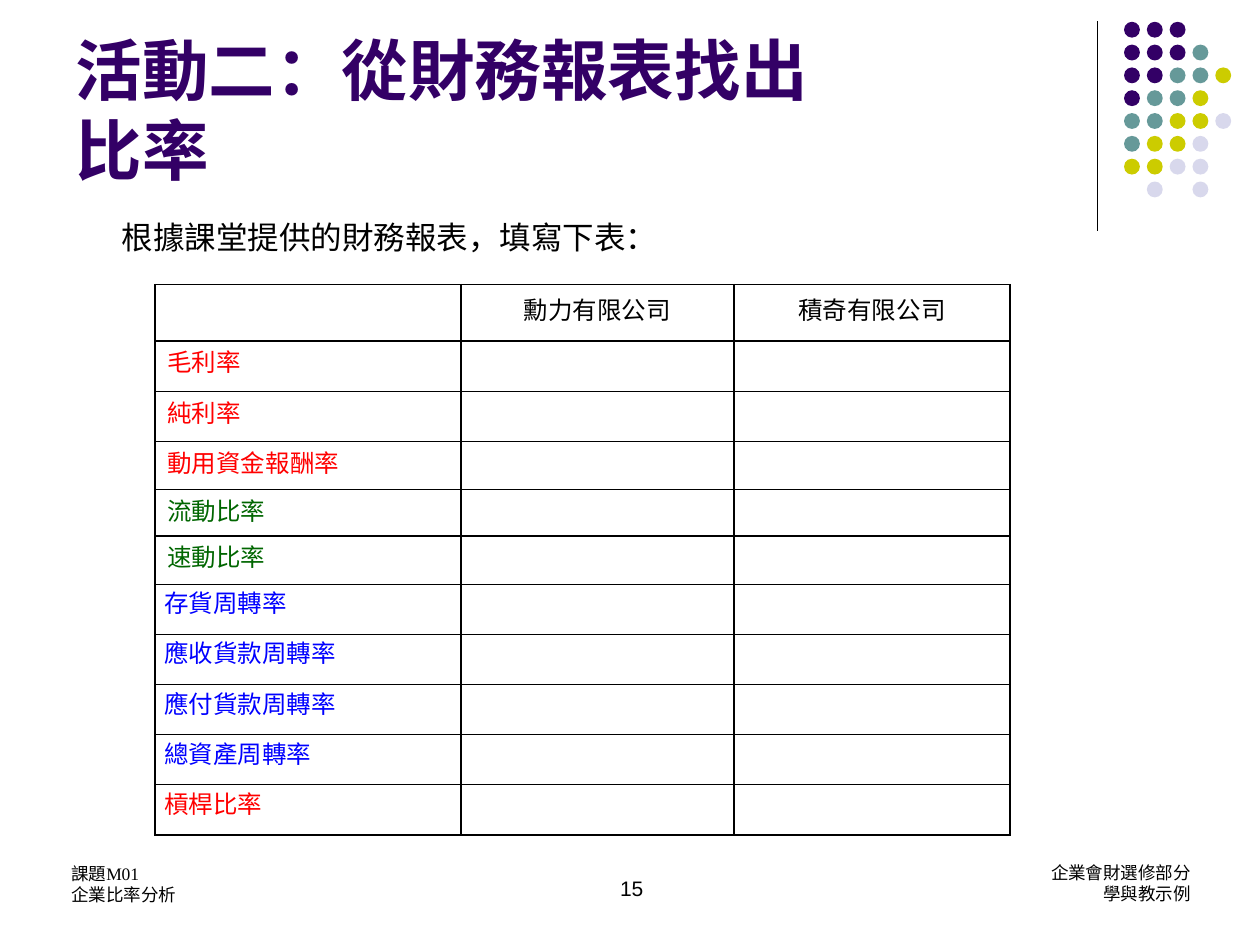
"""Build the slide on finding ratios from financial statements."""
from lxml import etree
from pptx import Presentation
from pptx.dml.color import RGBColor
from pptx.enum.shapes import MSO_CONNECTOR, MSO_SHAPE
from pptx.enum.text import MSO_ANCHOR, MSO_AUTO_SIZE, PP_ALIGN
from pptx.oxml import parse_xml
from pptx.oxml.ns import qn
from pptx.util import Cm, Pt

LINE = MSO_CONNECTOR.STRAIGHT
OVAL = MSO_SHAPE.OVAL
TOP, BOTTOM = MSO_ANCHOR.TOP, MSO_ANCHOR.BOTTOM
FIXED = MSO_AUTO_SIZE.NONE
LEFT, CENTER, RIGHT = PP_ALIGN.LEFT, PP_ALIGN.CENTER, PP_ALIGN.RIGHT

BLACK = RGBColor(0x00, 0x00, 0x00)
PURPLE = RGBColor(0x33, 0x00, 0x66)
TEAL = RGBColor(0x66, 0x99, 0x99)
LIME = RGBColor(0xCC, 0xCC, 0x00)
PALE = RGBColor(0xD8, 0xD8, 0xEC)
RED = RGBColor(0xFF, 0x00, 0x00)
GREEN = RGBColor(0x00, 0x66, 0x00)
BLUE = RGBColor(0x00, 0x00, 0xFF)

ARIAL, COMIC, TIMES = "Arial", "Comic Neue", "Times New Roman"
BORDER = (
    '<a:{} xmlns:a="http://schemas.openxmlformats.org/drawingml/2006/main" w="12700">'
    '<a:solidFill><a:srgbClr val="000000"/></a:solidFill></a:{}>'
)


def write(par, size, color, *parts, bold=False):
    for text, face in parts:
        run = par.add_run()
        run.text = text
        run.font.name = face
        run.font.size = Pt(size)
        run.font.bold = bold
        run.font.color.rgb = color


def label(box, lines, size, face, align, wrap=True, anchor=TOP):
    shape = slide.shapes.add_textbox(*map(Cm, box))
    frame = shape.text_frame
    frame.word_wrap = wrap
    frame.vertical_anchor = anchor
    frame.text = "\n".join(lines)
    for par in frame.paragraphs:
        par.alignment = align
        for run in par.runs:
            run.font.name = face
            run.font.size = Pt(size)
            run.font.color.rgb = BLACK


prs = Presentation()
prs.slide_width, prs.slide_height = Cm(25.4), Cm(19.05)
slide = prs.slides.add_slide(prs.slide_layouts[5])

rule = slide.shapes.add_connector(LINE, Cm(22.12), Cm(0.43), Cm(22.12), Cm(4.65))
rule.line.color.rgb = BLACK
rule.line.width = Pt(0.75)
etree.SubElement(rule.element.spPr, qn("a:effectLst"))

tints = {"P": PURPLE, "T": TEAL, "L": LIME, "S": PALE}
dots = ["PPP", "PPPT", "PPTTL", "PTTL", "TTLLS", "TLLS", "LLSS", " S S"]
for row, marks in enumerate(dots):
    for col, mark in enumerate(marks):
        if mark in tints:
            dot = slide.shapes.add_shape(
                OVAL, Cm(22.66 + 0.46 * col), Cm(0.44 + 0.46 * row), Cm(0.32), Cm(0.32)
            )
            dot.shadow.inherit = False
            dot.fill.solid()
            dot.fill.fore_color.rgb = tints[mark]
            dot.line.fill.background()

title = slide.shapes.title
title.left, title.top, title.width, title.height = Cm(1.27), Cm(0.33), Cm(20.96), Cm(3.61)
frame = title.text_frame
frame.auto_size = FIXED
frame.vertical_anchor = BOTTOM
head = frame.paragraphs[0]
head.alignment = LEFT
write(head, 38, PURPLE, ("活動二：", ARIAL), ("從財務報表找出", COMIC), bold=True)
head.add_line_break()
write(head, 38, PURPLE, ("比率", COMIC), bold=True)

intro = slide.shapes.add_textbox(Cm(2.21), Cm(4.27), Cm(21.51), Cm(1.02)).text_frame
intro.word_wrap = True
write(intro.paragraphs[0], 18, BLACK,
      ("根據課堂提供的", ARIAL), ("財務報表", COMIC), ("，填寫下表：", ARIAL))

label((20.9, 17.25, 3.35, 1.55), ["企業會財選修部分", "學與教示例"], 10, TIMES, RIGHT, wrap=False)
label((1.19, 17.27, 8.99, 1.27), ["課題M01", "企業比率分析"], 10, TIMES, LEFT)
label((8.71, 17.02, 8.05, 1.27), ["15"], 12, ARIAL, CENTER, anchor=BOTTOM)

firms = ["勳力有限公司", "積奇有限公司"]
ratios = [
    ("毛利率", RED), ("純利率", RED), ("動用資金報酬率", RED),
    ("流動比率", GREEN), ("速動比率", GREEN),
    ("存貨周轉率", BLUE), ("應收貨款周轉率", BLUE),
    ("應付貨款周轉率", BLUE), ("總資產周轉率", BLUE), ("槓桿比率", RED),
]
widths = [6.17, 5.51, 5.56]
heights = [1.14, 1.01, 1.01, 0.97, 0.94, 0.97] + [1.01] * 5
table = slide.shapes.add_table(
    len(heights), len(widths), Cm(3.12), Cm(5.74), Cm(sum(widths)), Cm(sum(heights))
).table
table.first_row = table.horz_banding = False
for col, width in zip(table.columns, widths):
    col.width = Cm(width)
for row, height in zip(table.rows, heights):
    row.height = Cm(height)
for cell in table.iter_cells():
    cell.margin_top = cell.margin_bottom = 0
    for side in ("lnL", "lnR", "lnT", "lnB"):
        cell._tc.get_or_add_tcPr().append(parse_xml(BORDER.format(side, side)))
    cell.fill.background()

for col, firm in enumerate(firms, 1):
    cell = table.cell(0, col)
    cell.margin_top = cell.margin_bottom = Cm(0.13)
    par = cell.text_frame.paragraphs[0]
    par.alignment = CENTER
    write(par, 14, BLACK, (firm, TIMES))

for row, (name, color) in enumerate(ratios, 1):
    cell = table.cell(row, 0)
    par = cell.text_frame.paragraphs[0]
    if row <= 5:
        cell.margin_top = cell.margin_bottom = Cm(0.13)
        par.line_spacing = 0.85
    else:
        cell.margin_left = cell.margin_right = Cm(0.19)
    parts = [("純利", COMIC), ("率", TIMES)] if name == "純利率" else [(name, COMIC)]
    write(par, 14, color, *parts)

prs.save("out.pptx")
